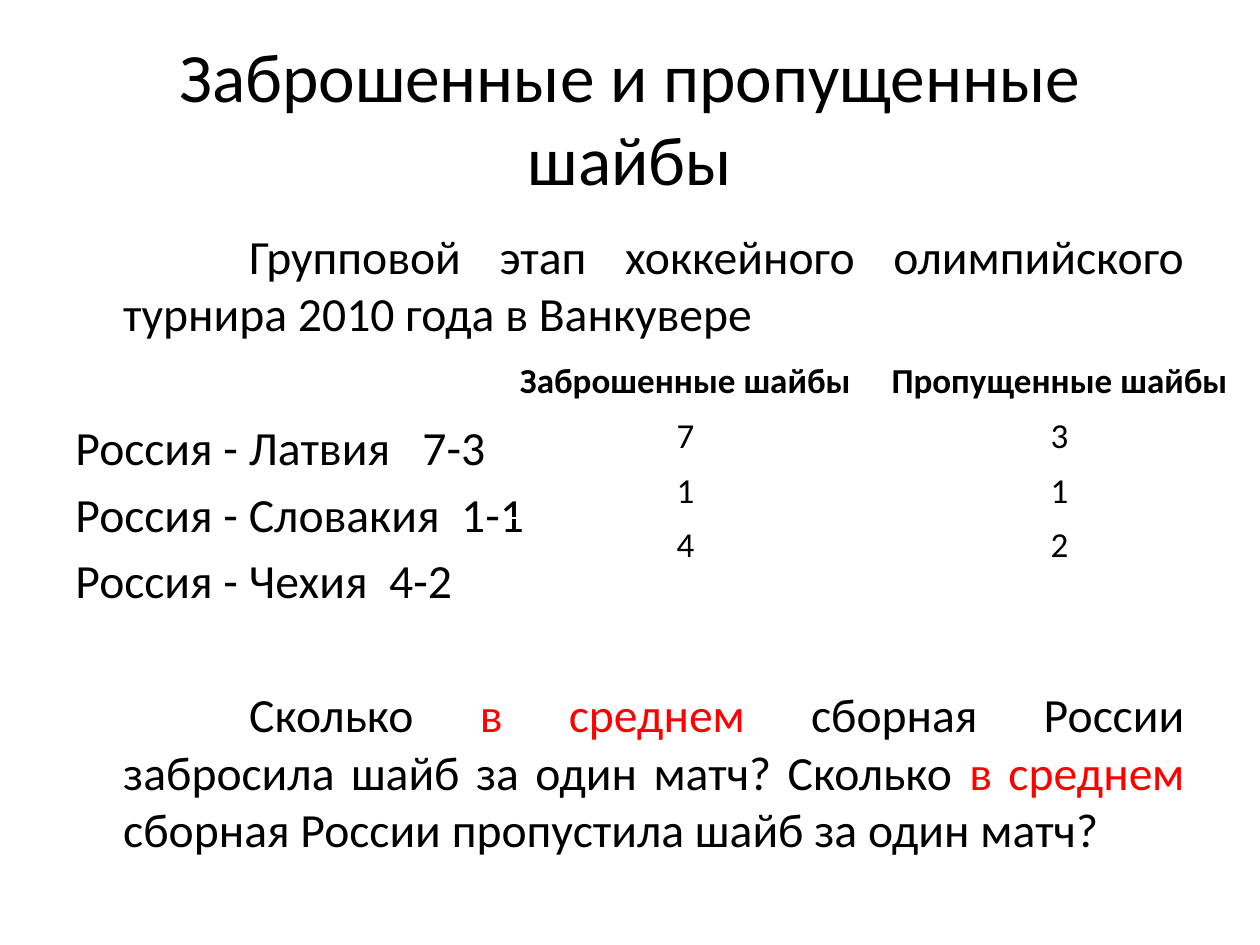
from dataclasses import dataclass

from lxml.etree import SubElement
from pptx import Presentation
from pptx.dml.color import RGBColor
from pptx.enum.text import MSO_ANCHOR, PP_ALIGN
from pptx.oxml.ns import qn
from pptx.util import Inches, Pt


@dataclass(frozen=True)
class Theme:
    font: str = "Calibri"
    text: RGBColor = RGBColor(0, 0, 0)
    accent: RGBColor = RGBColor(255, 0, 0)
    border: RGBColor = RGBColor(255, 255, 255)
    title_size: float = 39.6
    body_size: float = 27.2
    table_size: float = 20


theme = Theme()


def add_run(paragraph, text, size, color=theme.text, bold=False):
    run = paragraph.add_run()
    run.text = text
    run.font.name = theme.font
    run.font.size = Pt(size)
    run.font.bold = bold
    run.font.color.rgb = color


def add_border(cell, side, width):
    """Draw one cell side: L, R, T or B; call before setting the cell fill."""
    line = SubElement(cell._tc.get_or_add_tcPr(), qn(f"a:ln{side}"), w=str(Pt(width)))
    fill = SubElement(line, qn("a:solidFill"))
    SubElement(fill, qn("a:srgbClr"), val=str(theme.border))


presentation = Presentation()
presentation.slide_width = Inches(10)
presentation.slide_height = Inches(7.5)
slide = presentation.slides.add_slide(presentation.slide_layouts[6])

# Title
title = slide.shapes.add_textbox(Inches(0.5), Inches(0.3), Inches(9), Inches(1.25))
title.text_frame.word_wrap = True
title.text_frame.vertical_anchor = MSO_ANCHOR.MIDDLE
paragraph = title.text_frame.paragraphs[0]
paragraph.alignment = PP_ALIGN.CENTER
add_run(paragraph, "Заброшенные и пропущенные шайбы", theme.title_size)

# Body: first-line indent in inches, space before in points, runs
prose_indent, score_indent = 1, -0.38
line_gap, section_gap = 5.4, 44
body_paragraphs = [
    (prose_indent, 0, [
        ("Групповой этап хоккейного олимпийского турнира 2010 года в Ванкувере", theme.text),
    ]),
    (score_indent, section_gap, [("Россия - Латвия   7-3", theme.text)]),
    (score_indent, line_gap, [("Россия - Словакия  1-1", theme.text)]),
    (score_indent, line_gap, [("Россия - Чехия  4-2", theme.text)]),
    (prose_indent, section_gap, [
        ("Сколько ", theme.text),
        ("в среднем ", theme.accent),
        ("сборная России забросила шайб за один матч? Сколько", theme.text),
        (" в среднем ", theme.accent),
        ("сборная России пропустила шайб за один матч?", theme.text),
    ]),
]
body = slide.shapes.add_textbox(Inches(0.5), Inches(1.75), Inches(9), Inches(4.95))
body.text_frame.word_wrap = True
for index, (indent, gap, runs) in enumerate(body_paragraphs):
    paragraph = body.text_frame.paragraphs[0] if index == 0 else body.text_frame.add_paragraph()
    paragraph.alignment = PP_ALIGN.JUSTIFY
    paragraph.space_before = Pt(gap)
    properties = paragraph._p.get_or_add_pPr()
    properties.set("marL", str(Inches(0.38)))
    properties.set("indent", str(Inches(indent)))
    for text, color in runs:
        add_run(paragraph, text, theme.body_size, color)

# Goals table
goals = [
    ("Заброшенные шайбы", "Пропущенные шайбы"),
    ("7", "3"),
    ("1", "1"),
    ("4", "2"),
]
table = slide.shapes.add_table(
    len(goals), 2, Inches(3.98), Inches(2.81), Inches(5.94), Inches(1.73)
).table
for column, width in zip(table.columns, (2.92, 3.02)):
    column.width = Inches(width)
for row_index, values in enumerate(goals):
    is_header = row_index == 0
    for column_index, value in enumerate(values):
        cell = table.cell(row_index, column_index)
        for side in "LRTB":
            header_edge = (is_header and side == "B") or (row_index == 1 and side == "T")
            add_border(cell, side, 3 if header_edge else 1)
        cell.fill.background()
        paragraph = cell.text_frame.paragraphs[0]
        paragraph.alignment = PP_ALIGN.CENTER
        add_run(paragraph, value, theme.table_size, bold=is_header)

presentation.save("out.pptx")
